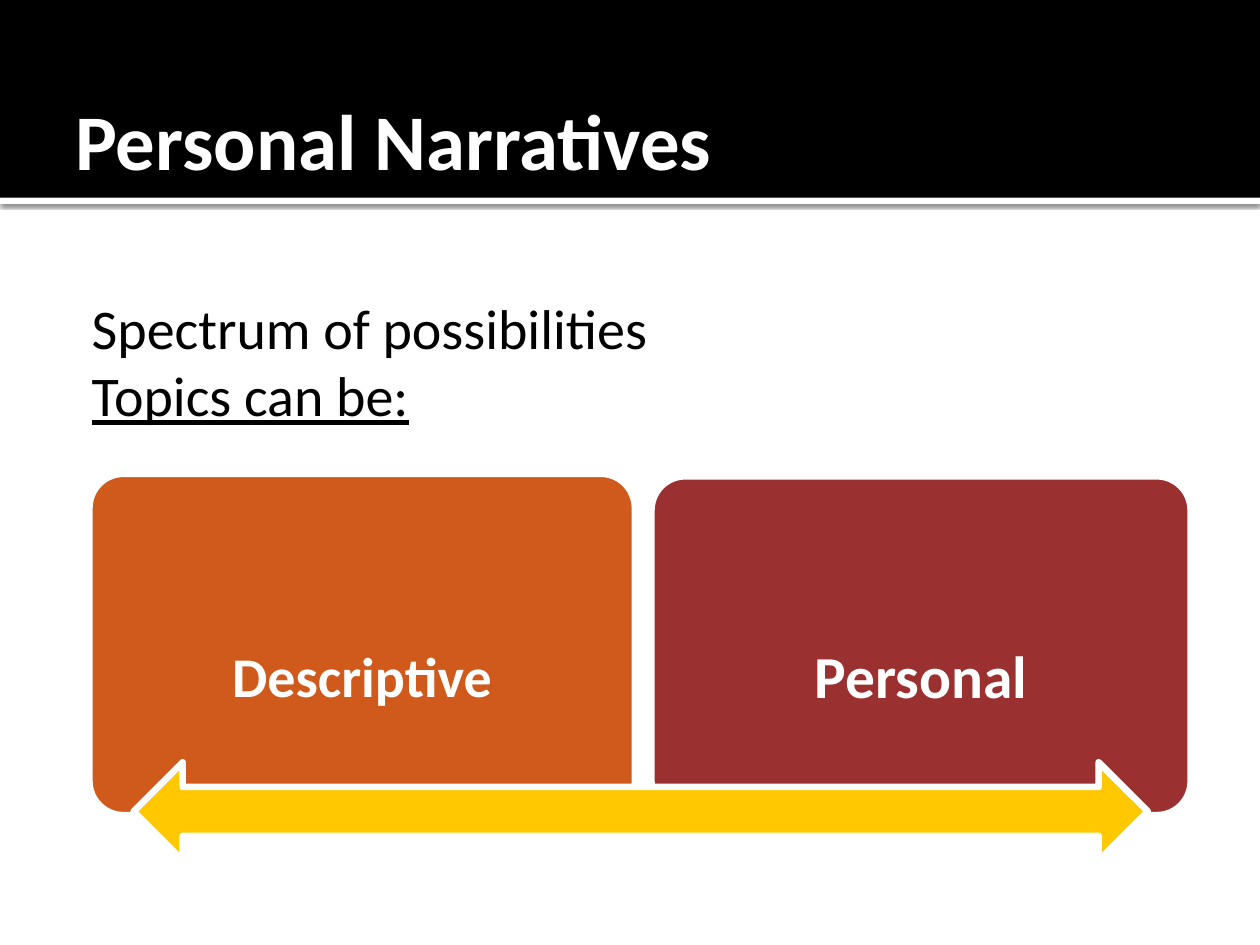
"""Build the Personal Narratives slide."""
from lxml import etree
from pptx import Presentation
from pptx.dml.color import RGBColor
from pptx.enum.shapes import MSO_SHAPE as Shape
from pptx.enum.text import MSO_ANCHOR as Anchor, PP_ALIGN as Align
from pptx.oxml.ns import qn
from pptx.util import Pt

BLACK = RGBColor(0, 0, 0)
WHITE = RGBColor(0xFF, 0xFF, 0xFF)
ORANGE = RGBColor(0xCF, 0x5A, 0x1B)
RED = RGBColor(0x9A, 0x30, 0x2F)
YELLOW = RGBColor(0xFF, 0xC8, 0x00)
FONT = "Calibri"

TITLE = "Personal Narratives"
BODY = [("Spectrum of possibilities", False), ("Topics can be:", True)]
CARDS = [
    ("Descriptive", 32, ORANGE, (51.12, 270.72, 311.76, 195.12)),
    ("Personal", 34, RED, (372.24, 272.16, 308.16, 193.68)),
]
LABEL_TOP, LABEL_HEIGHT = 349.2, 77.76


def add_block(slide, kind, box, fill, outline=None):
    shape = slide.shapes.add_shape(kind, *map(Pt, box))
    shape.shadow.inherit = False
    shape.fill.solid()
    shape.fill.fore_color.rgb = fill
    if outline is None:
        shape.line.fill.background()
    else:
        shape.line.color.rgb = outline
        shape.line.width = Pt(3.78)
    return shape


def add_shadow(shape):
    effects = shape._element.spPr.find(qn("a:effectLst"))
    shadow = etree.SubElement(
        effects, qn("a:outerShdw"), blurRad=str(Pt(2.5)), dist=str(Pt(0.8)),
        dir="5400000", algn="tl", rotWithShape="0")
    color = etree.SubElement(shadow, qn("a:srgbClr"), val=str(BLACK))
    etree.SubElement(color, qn("a:alpha"), val="60000")


def add_text_frame(slide, box, anchor, inset=7.2):
    frame = slide.shapes.add_textbox(*map(Pt, box)).text_frame
    frame.word_wrap = True
    frame.vertical_anchor = anchor
    frame.margin_left = frame.margin_right = Pt(inset)
    frame.margin_top = frame.margin_bottom = Pt(inset)
    return frame


def add_run(paragraph, text, size, color, bold=False, underline=False):
    run = paragraph.add_run()
    run.text = text
    font = run.font
    font.name, font.size = FONT, Pt(size)
    font.bold, font.underline = bold, underline
    font.color.rgb = color


def add_header(slide):
    strip = add_block(slide, Shape.RECTANGLE, (0, 113, 720, 3.6), WHITE)
    add_shadow(strip)
    add_block(slide, Shape.RECTANGLE, (0, 0, 720, 113), BLACK)
    frame = add_text_frame(slide, (36, 21.6, 648, 92.16), Anchor.BOTTOM)
    add_run(frame.paragraphs[0], TITLE, 45, WHITE, bold=True)


def add_body(slide):
    frame = add_text_frame(slide, (36, 160.56, 648, 363.6), Anchor.TOP)
    for index, (text, underline) in enumerate(BODY):
        paragraph = frame.add_paragraph() if index else frame.paragraphs[0]
        properties = paragraph._p.get_or_add_pPr()
        properties.set("marL", str(Pt(34.56)))
        properties.set("indent", str(Pt(-25.2)))
        add_run(paragraph, text, 32, BLACK, underline=underline)


def add_spectrum(slide):
    for text, size, color, box in CARDS:
        card = add_block(slide, Shape.ROUNDED_RECTANGLE, box, color, WHITE)
        card.adjustments[0] = 0.1
        left, _, width, _ = box
        label = (left, LABEL_TOP, width, LABEL_HEIGHT)
        paragraph = add_text_frame(slide, label, Anchor.MIDDLE, 18).paragraphs[0]
        paragraph.alignment = Align.CENTER
        paragraph.line_spacing = 0.9
        add_run(paragraph, text, size, WHITE, bold=True)
    add_block(slide, Shape.LEFT_RIGHT_ARROW, (76.32, 435.6, 579.6, 56.16), YELLOW, WHITE)


def main():
    presentation = Presentation()
    presentation.slide_width, presentation.slide_height = Pt(720), Pt(540)
    slide = presentation.slides.add_slide(presentation.slide_layouts[6])
    add_header(slide)
    add_body(slide)
    add_spectrum(slide)
    presentation.save("out.pptx")


if __name__ == "__main__":
    main()
